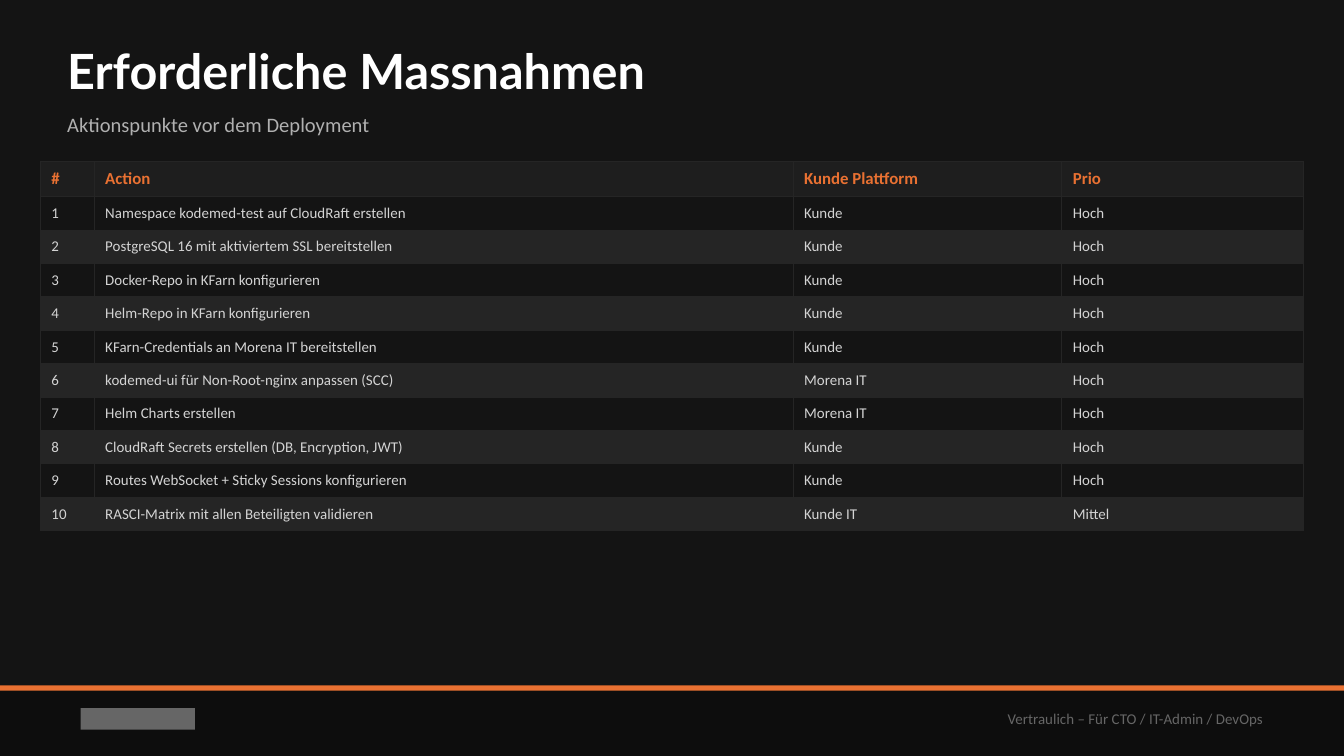
from dataclasses import dataclass

from lxml import etree
from pptx import Presentation
from pptx.dml.color import RGBColor
from pptx.enum.shapes import MSO_SHAPE
from pptx.enum.text import MSO_ANCHOR, MSO_AUTO_SIZE, PP_ALIGN
from pptx.oxml.ns import qn
from pptx.util import Inches, Pt

RECTANGLE = MSO_SHAPE.RECTANGLE
MIDDLE = MSO_ANCHOR.MIDDLE
LEFT, RIGHT = PP_ALIGN.LEFT, PP_ALIGN.RIGHT
NO_AUTOFIT = MSO_AUTO_SIZE.NONE


@dataclass(frozen=True)
class Theme:
    background: str = "141414"
    footer: str = "0D0D0D"
    header: str = "1E1E1E"
    band: str = "252525"
    accent: str = "E97132"
    white: str = "FFFFFF"
    cell_text: str = "D4D4D4"
    subtitle: str = "B0B0B0"
    muted: str = "666666"
    heading_font: str = "Lato"
    body_font: str = "Calibri"
    title_size: int = 26
    subtitle_size: int = 11
    header_size: int = 9
    small_size: int = 8


THEME = Theme()

WIDTH = 10
HEIGHT = WIDTH * 9 / 16
MARGIN = 0.5
FOOTER_TOP = 5.1

COLUMN_WIDTHS = (0.4, 5.2, 2, 1.8)
HEADER_HEIGHT, ROW_HEIGHT = Pt(19), Pt(17.9)
CELL_SIDE, CELL_EDGE = Pt(6), Pt(4)
HEADERS = ("#", "Action", "Kunde Plattform", "Prio")
ACTIONS = (
    ("Namespace kodemed-test auf CloudRaft erstellen", "Kunde", "Hoch"),
    ("PostgreSQL 16 mit aktiviertem SSL bereitstellen", "Kunde", "Hoch"),
    ("Docker-Repo in KFarn konfigurieren", "Kunde", "Hoch"),
    ("Helm-Repo in KFarn konfigurieren", "Kunde", "Hoch"),
    ("KFarn-Credentials an Morena IT bereitstellen", "Kunde", "Hoch"),
    ("kodemed-ui für Non-Root-nginx anpassen (SCC)", "Morena IT", "Hoch"),
    ("Helm Charts erstellen", "Morena IT", "Hoch"),
    ("CloudRaft Secrets erstellen (DB, Encryption, JWT)", "Kunde", "Hoch"),
    ("Routes WebSocket + Sticky Sessions konfigurieren", "Kunde", "Hoch"),
    ("RASCI-Matrix mit allen Beteiligten validieren", "Kunde IT", "Mittel"),
)


def add_run(paragraph, text, size, color, font=THEME.body_font, bold=False):
    run = paragraph.add_run()
    run.text = text
    run.font.name = font
    run.font.size = Pt(size)
    run.font.bold = bold
    run.font.color.rgb = RGBColor.from_string(color)


def set_fill(target, color):
    target.fill.solid()
    target.fill.fore_color.rgb = RGBColor.from_string(color)


def add_block(slide, left, top, width, height, color):
    block = slide.shapes.add_shape(
        RECTANGLE, Inches(left), Inches(top), Inches(width), Inches(height))
    block.shadow.inherit = False
    set_fill(block, color)
    block.line.fill.background()


def format_frame(frame, alignment):
    """Set the shared text layout and return the first paragraph."""
    frame.word_wrap = True
    frame.auto_size = NO_AUTOFIT
    frame.vertical_anchor = MIDDLE
    paragraph = frame.paragraphs[0]
    paragraph.alignment = alignment
    return paragraph


def place_heading(placeholder, top, height):
    """Move a placeholder into the heading area and return its paragraph."""
    placeholder.left, placeholder.top = Inches(MARGIN), Inches(top)
    placeholder.width, placeholder.height = Inches(WIDTH - 2 * MARGIN), Inches(height)
    frame = placeholder.text_frame
    frame.margin_left = frame.margin_right = frame.margin_top = frame.margin_bottom = 0
    paragraph = format_frame(frame, LEFT)
    paragraph.space_before = Pt(0)
    return paragraph


def set_borders(cell, color, width):
    properties = cell._tc.get_or_add_tcPr()
    for index, side in enumerate(("a:lnL", "a:lnR", "a:lnT", "a:lnB")):
        line = etree.Element(qn(side), w=str(Pt(width)))
        fill = etree.SubElement(line, qn("a:solidFill"))
        etree.SubElement(fill, qn("a:srgbClr"), val=color)
        properties.insert(index, line)


def fill_cell(cell, text, fill, size, color, bold):
    cell.margin_left = cell.margin_right = CELL_SIDE
    cell.margin_top = cell.margin_bottom = CELL_EDGE
    cell.vertical_anchor = MIDDLE
    set_fill(cell, fill)
    set_borders(cell, THEME.band, 0.5)
    add_run(cell.text_frame.paragraphs[0], text, size, color, bold=bold)


def add_action_table(slide):
    rows = [HEADERS] + [(str(number), *action) for number, action in enumerate(ACTIONS, 1)]
    table = slide.shapes.add_table(
        len(rows), len(HEADERS), Inches(0.3), Inches(1.2),
        Inches(sum(COLUMN_WIDTHS)), HEADER_HEIGHT + ROW_HEIGHT * len(ACTIONS)).table
    for column, width in zip(table.columns, COLUMN_WIDTHS):
        column.width = Inches(width)
    for row_index, texts in enumerate(rows):
        is_header = row_index == 0
        table.rows[row_index].height = HEADER_HEIGHT if is_header else ROW_HEIGHT
        if is_header:
            style = (THEME.header, THEME.header_size, THEME.accent, True)
        else:
            fill = THEME.background if row_index % 2 else THEME.band
            style = (fill, THEME.small_size, THEME.cell_text, False)
        for column_index, text in enumerate(texts):
            fill_cell(table.cell(row_index, column_index), text, *style)


def add_footer(slide):
    # Band, accent line and plain block
    add_block(slide, 0, FOOTER_TOP, WIDTH, HEIGHT - FOOTER_TOP, THEME.footer)
    add_block(slide, 0, FOOTER_TOP, WIDTH, 0.04, THEME.accent)
    add_block(slide, MARGIN + 0.1, FOOTER_TOP + 0.17, 0.85, 0.16, THEME.muted)
    # Confidentiality notice
    box = slide.shapes.add_textbox(
        Inches(WIDTH - MARGIN - 4), Inches(FOOTER_TOP + 0.05), Inches(4), Inches(0.4))
    notice = format_frame(box.text_frame, RIGHT)
    add_run(notice, "Vertraulich – Für CTO / IT-Admin / DevOps", THEME.small_size, THEME.muted)


def add_headings(slide):
    title = place_heading(slide.shapes.title, 0.25, 0.55)
    add_run(title, "Erforderliche Massnahmen", THEME.title_size, THEME.white,
            THEME.heading_font, True)
    subtitle = place_heading(slide.placeholders[1], 0.75, 0.35)
    add_run(subtitle, "Aktionspunkte vor dem Deployment", THEME.subtitle_size, THEME.subtitle)


def main():
    presentation = Presentation()
    presentation.slide_width, presentation.slide_height = Inches(WIDTH), Inches(HEIGHT)
    # Title layout: title and subtitle placeholders
    slide = presentation.slides.add_slide(presentation.slide_layouts[0])
    set_fill(slide.background, THEME.background)
    add_footer(slide)
    add_headings(slide)
    add_action_table(slide)
    presentation.save("out.pptx")


if __name__ == "__main__":
    main()
